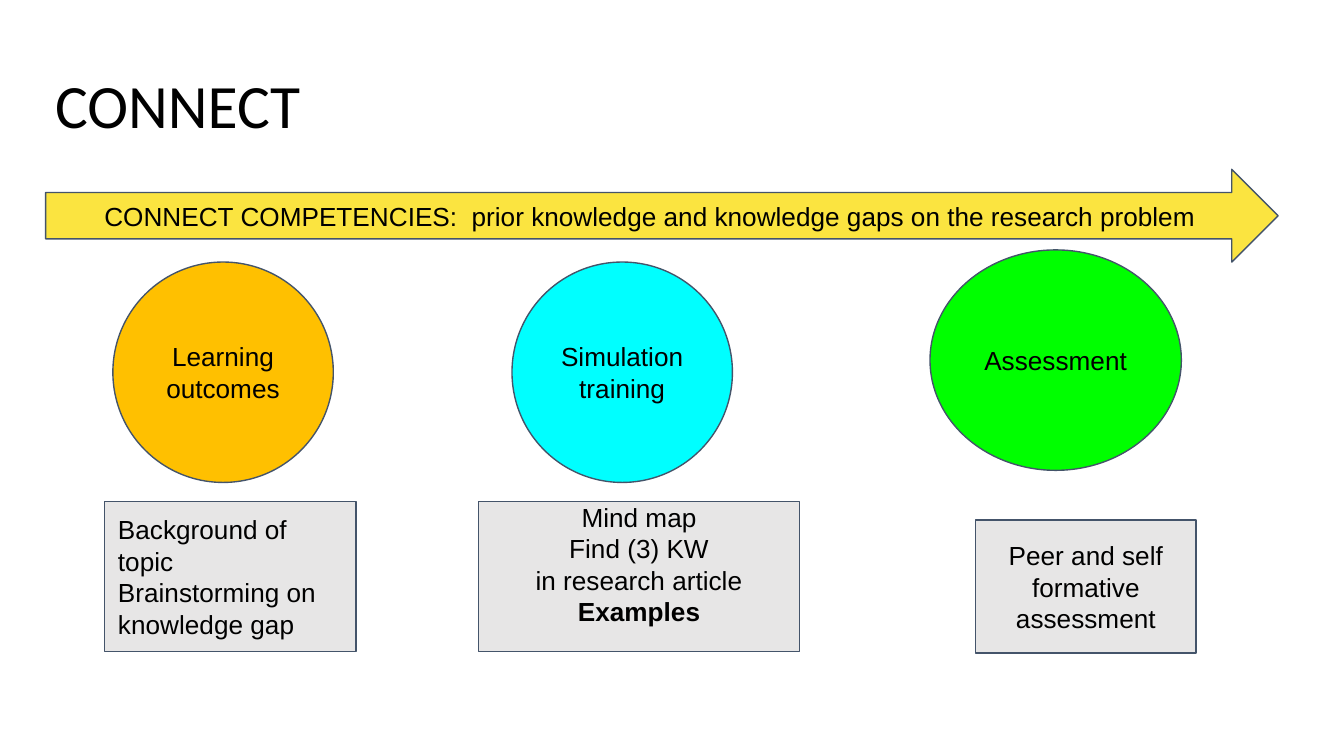
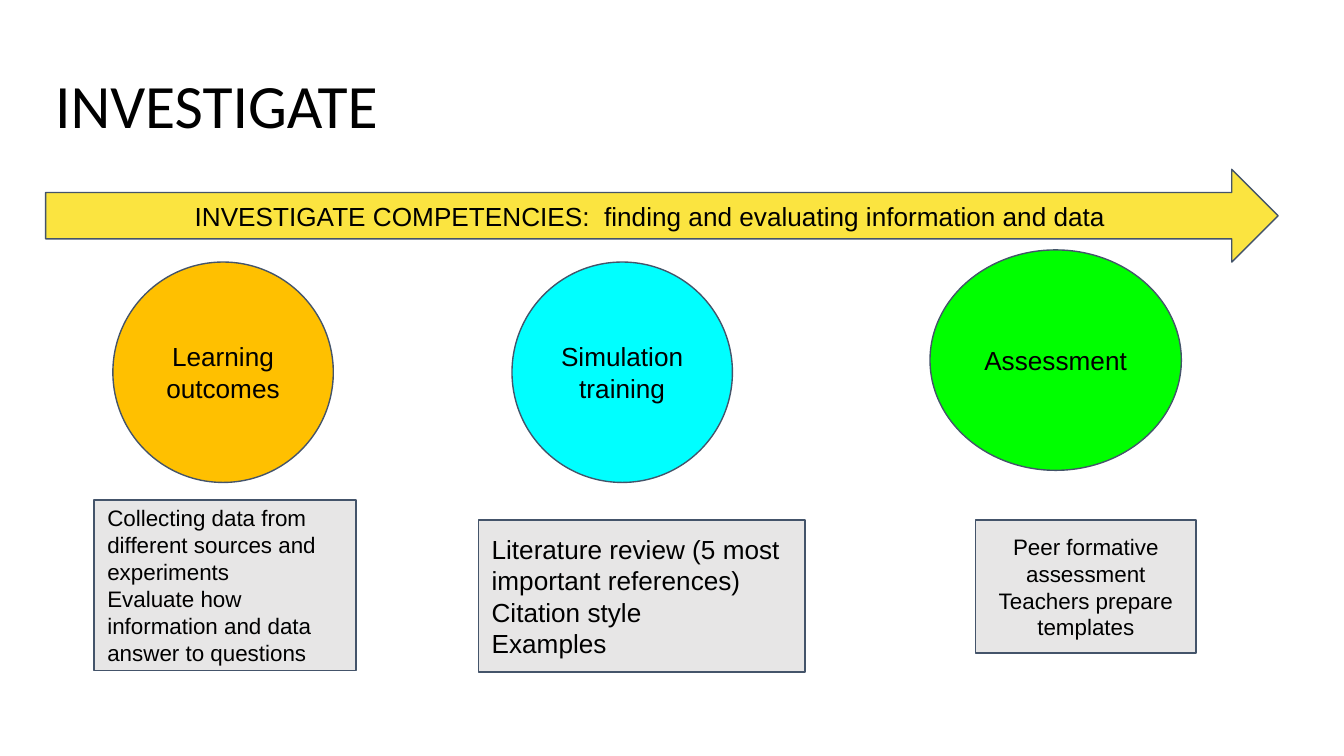
"""Build two slides on competencies, each with a banner and three columns."""
import pptx
import pptx.dml.color
import pptx.enum.shapes
import pptx.enum.text
import pptx.util

HUES = {
    "ink": "000000", "edge": "44546A", "band": "FBE440", "note": "E7E6E6",
    "goal": "FFC000", "train": "00FFFF", "test": "00FF00",
}
CELL = pptx.util.Inches(0.1)
SHAPE = pptx.enum.shapes.MSO_SHAPE
ALIGN = pptx.enum.text.PP_ALIGN
ANCHOR = pptx.enum.text.MSO_ANCHOR

DISCS = [
    ("Learning outcomes", "goal", (8.4, 19.5, 16.4, 16.4)),
    ("Simulation training", "train", (38.1, 19.5, 16.4, 16.4)),
    ("Assessment", "test", (69.2, 18.6, 18.7, 16.4)),
]
PAGES = [
    {
        "title": "CONNECT",
        "band": "CONNECT COMPETENCIES:  prior knowledge and knowledge gaps on the research problem",
        "notes": [
            {"text": "Background of topic\nBrainstorming on knowledge gap",
             "box": (7.8, 37.3, 18.7, 11.2), "align": ALIGN.LEFT},
            {"text": "Mind map\nFind (3) KW\nin research article\nExamples",
             "box": (35.6, 37.3, 23.9, 11.2), "top": True, "bold": "Examples"},
            {"text": "Peer and self formative assessment",
             "box": (72.6, 38.7, 16.4, 9.9)},
        ],
    },
    {
        "title": "INVESTIGATE",
        "band": "INVESTIGATE COMPETENCIES:  finding and evaluating information and data",
        "notes": [
            {"text": "Collecting data from different sources and experiments\n"
                     "Evaluate how information and data answer to questions",
             "box": (7, 37.2, 19.5, 12.7), "align": ALIGN.LEFT, "size": 12},
            {"text": "Literature review (5 most important references)\nCitation style\nExamples",
             "box": (35.6, 38.7, 24.3, 11.3), "align": ALIGN.LEFT},
            {"text": "Peer formative assessment\nTeachers prepare templates",
             "box": (72.6, 38.7, 16.4, 9.9), "size": 12},
        ],
    },
]


def tint(name):
    """Return the named colour."""
    return pptx.dml.color.RGBColor.from_string(HUES[name])


def cells(*counts):
    """Turn counts of grid cells into lengths."""
    return [round(count * CELL) for count in counts]


def write(frame, text, size, face, align, bold=None):
    """Fill a text frame and format its runs."""
    frame.text = text
    frame.word_wrap = True
    for para in frame.paragraphs:
        para.alignment = align
        for run in para.runs:
            run.font.size = pptx.util.Pt(size)
            run.font.name = face
            run.font.bold = run.text == bold
            run.font.color.rgb = tint("ink")


def add_title(slide, text):
    """Place and format the slide title."""
    title = slide.shapes.title
    title.left, title.top, title.width, title.height = cells(3.4, 4.9, 93.2, 6.3)
    frame = title.text_frame
    write(frame, text, 33, "Calibri", ALIGN.LEFT)
    frame.auto_size = pptx.enum.text.MSO_AUTO_SIZE.NONE
    frame.vertical_anchor = ANCHOR.MIDDLE
    frame.margin_left, frame.margin_right = cells(0.7, 0.7)
    frame.margin_top, frame.margin_bottom = cells(0.4, 0.4)
    frame.paragraphs[0].line_spacing = 0.9


def add_block(slide, kind, box, hue, text, size=14, align=ALIGN.CENTER, top=False, bold=None):
    """Draw a filled, outlined shape with a label."""
    shape = slide.shapes.add_shape(kind, *cells(*box))
    shape.shadow.inherit = False
    shape.fill.solid()
    shape.fill.fore_color.rgb = tint(hue)
    shape.line.color.rgb = tint(HUES and "edge")
    shape.line.width = pptx.util.Pt(0.75)
    frame = shape.text_frame
    write(frame, text, size, "Arial", align, bold)
    frame.margin_left = frame.margin_right = frame.margin_bottom = CELL
    frame.margin_top = 0 if top else CELL
    frame.vertical_anchor = ANCHOR.TOP if top else ANCHOR.MIDDLE


def add_page(deck, page):
    """Add one slide with title, discs, banner and notes."""
    slide = deck.slides.add_slide(deck.slide_layouts[5])
    add_title(slide, page["title"])
    for text, hue, box in DISCS:
        add_block(slide, SHAPE.OVAL, box, hue, text)
    add_block(slide, SHAPE.RIGHT_ARROW, (3.4, 12.6, 91.7, 6.9), "band", page["band"])
    for note in page["notes"]:
        add_block(slide, SHAPE.RECTANGLE, hue="note", **note)


def main():
    """Build and save the deck."""
    deck = pptx.Presentation()
    deck.slide_width, deck.slide_height = cells(100, 56.25)
    for page in PAGES:
        add_page(deck, page)
    deck.save("out.pptx")


if __name__ == "__main__":
    main()
